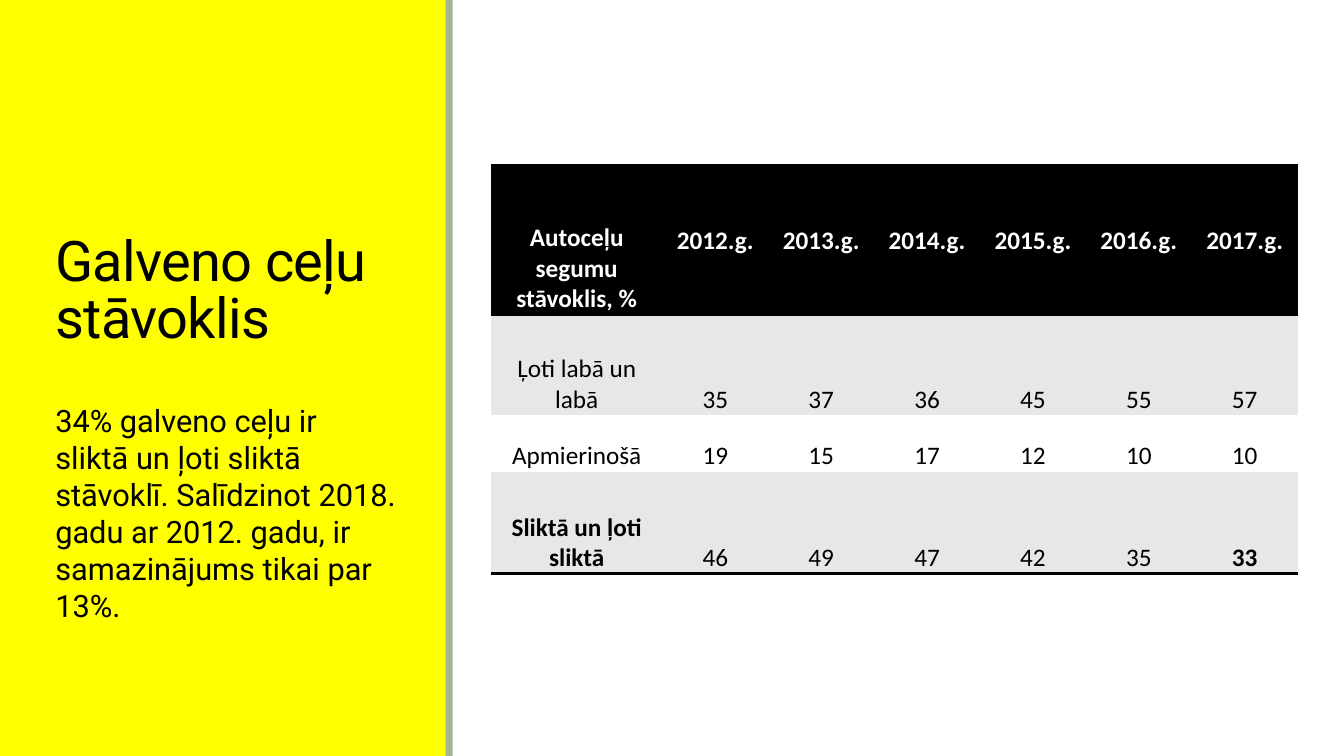
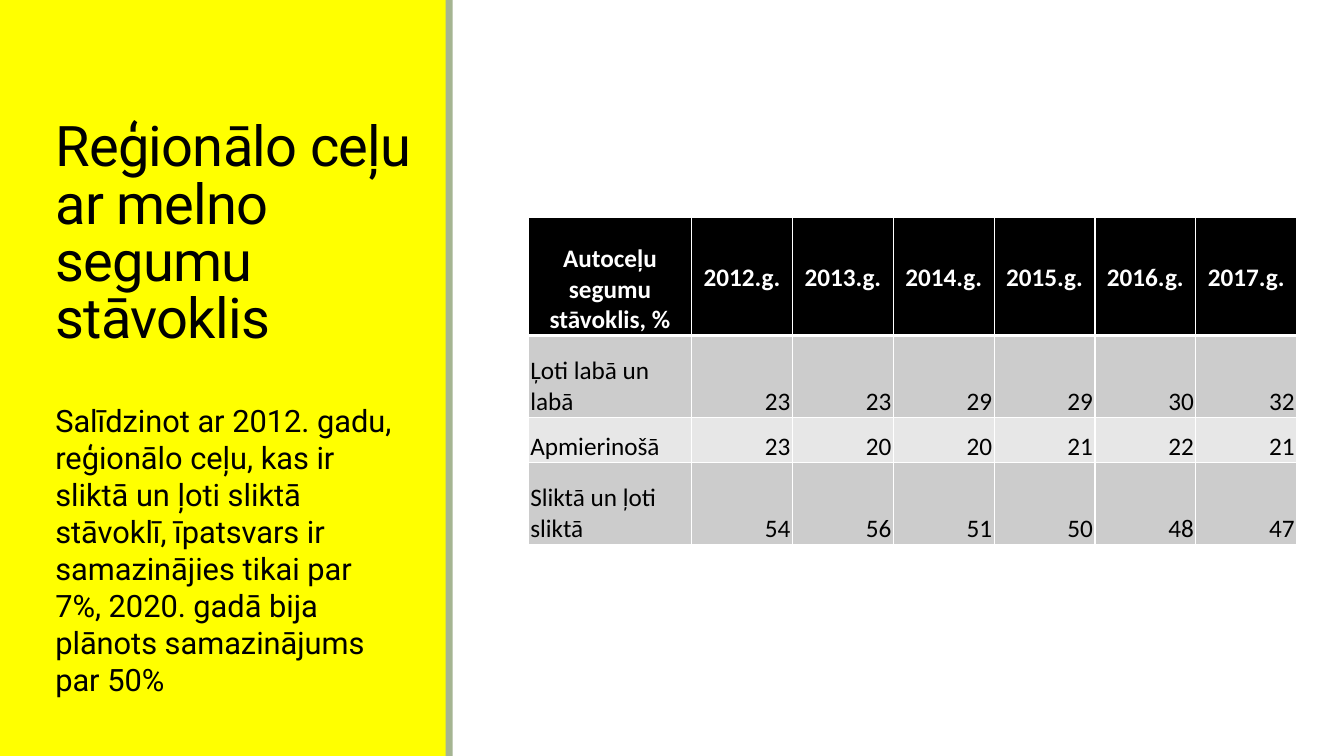
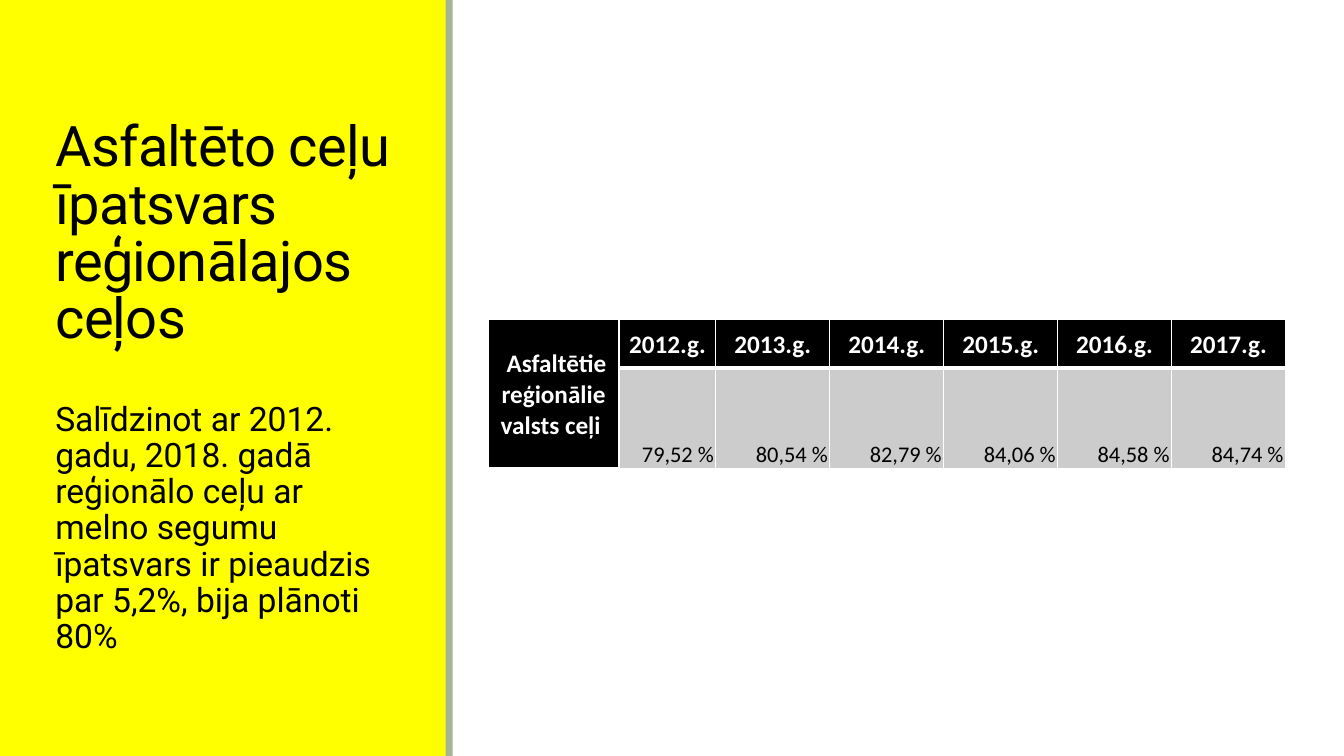
from dataclasses import dataclass, field

from lxml.etree import SubElement
from pptx import Presentation
from pptx.dml.color import RGBColor
from pptx.enum.shapes import MSO_SHAPE
from pptx.enum.text import MSO_ANCHOR, MSO_AUTO_SIZE, PP_ALIGN
from pptx.oxml.ns import qn
from pptx.slide import Slide, SlideLayout
from pptx.table import _Cell
from pptx.text.text import _Run
from pptx.util import Inches, Pt

COLORS = {
    "panel": "FFFF00",
    "rule": "A5B592",
    "black": "000000",
    "white": "FFFFFF",
    "light": "E7E7E7",
    "mid": "CCCCCC",
}
HEAD_FONT = "Roboto"
TABLE_FONT = "Calibri"
NO_STYLE = "{2D5ABB26-0587-4C30-8999-92F81FD0307C}"
YEARS = [f"{year}.g." for year in range(2012, 2018)]
Borders = dict[str, tuple[str, float]]
BLACK_EDGES: Borders = {"T": ("black", 2), "B": ("black", 2)}
BLACK_BOTTOM: Borders = {"B": ("black", 2)}
WHITE_HEAD: Borders = {"L": ("white", 1), "R": ("white", 1), "T": ("white", 1), "B": ("white", 3)}
WHITE_BODY: Borders = {"L": ("white", 1), "R": ("white", 1), "B": ("white", 1)}


@dataclass
class Band:
    left: float
    width: float
    color: str


@dataclass
class Row:
    height: float
    fill: str
    label: str | None
    values: list[str]
    borders: Borders = field(default_factory=dict)
    bold: tuple[int, ...] = ()


@dataclass
class RoadTable:
    left: float
    top: float
    cols: list[float]
    rows: list[Row]
    label_align: PP_ALIGN
    value_align: PP_ALIGN
    label_anchor: MSO_ANCHOR = MSO_ANCHOR.BOTTOM
    value_size: int = 18


@dataclass
class RoadSlide:
    title: str
    body: str
    body_height: float
    table: RoadTable
    title_width: float = 3.88
    body_size: int = 22
    body_spacing: float = 1.0


BANDS = [Band(0, 4.43, "panel"), Band(4.42, 0.07, "rule")]

SLIDES = [
    RoadSlide(
        "Galveno ceļu stāvoklis",
        "34% galveno ceļu ir sliktā un ļoti sliktā stāvoklī. Salīdzinot 2018. gadu "
        "ar 2012. gadu, ir samazinājums tikai par 13%.",
        2.32,
        RoadTable(
            4.87, 1.64, [1.7] + [1.05] * 6,
            [
                Row(1.48, "black", "Autoceļu segumu stāvoklis, %", YEARS, BLACK_EDGES),
                Row(1.0, "light", "Ļoti labā un labā", ["35", "37", "36", "45", "55", "57"]),
                Row(0.56, "white", "Apmierinošā", ["19", "15", "17", "12", "10", "10"]),
                Row(1.01, "light", "Sliktā un ļoti sliktā", ["46", "49", "47", "42", "35", "33"],
                    BLACK_BOTTOM, (0, 6)),
            ],
            PP_ALIGN.CENTER, PP_ALIGN.CENTER,
        ),
        title_width=4.88,
    ),
    RoadSlide(
        "Reģionālo ceļu ar melno segumu stāvoklis",
        "Salīdzinot ar 2012. gadu, reģionālo ceļu, kas ir sliktā un ļoti sliktā stāvoklī, "
        "īpatsvars ir samazinājies tikai par 7%, 2020. gadā bija plānots samazinājums par 50%",
        3.43,
        RoadTable(
            5.24, 2.16, [1.62] + [1.0] * 6,
            [
                Row(1.17, "black", "Autoceļu segumu stāvoklis, %", YEARS, WHITE_HEAD),
                Row(0.81, "mid", "Ļoti labā un labā", ["23", "23", "29", "29", "30", "32"], WHITE_BODY),
                Row(0.45, "light", "Apmierinošā", ["23", "20", "20", "21", "22", "21"], WHITE_BODY),
                Row(0.81, "mid", "Sliktā un ļoti sliktā", ["54", "56", "51", "50", "48", "47"], WHITE_BODY),
            ],
            PP_ALIGN.LEFT, PP_ALIGN.RIGHT,
        ),
    ),
    RoadSlide(
        "Asfaltēto ceļu īpatsvars reģionālajos ceļos",
        "Salīdzinot ar 2012. gadu, 2018. gadā reģionālo ceļu ar melno segumu īpatsvars "
        "ir pieaudzis par 5,2%, bija plānoti 80%",
        3.02,
        RoadTable(
            4.84, 3.17, [1.3, 0.96] + [1.13] * 5,
            [
                Row(0.48, "black", " Asfaltētie reģionālie valsts ceļi ", YEARS, WHITE_HEAD),
                Row(1.0, "mid", None,
                    ["79,52 %", "80,54 %", "82,79 %", "84,06 %", "84,58 %", "84,74 %"], WHITE_BODY),
            ],
            PP_ALIGN.CENTER, PP_ALIGN.RIGHT, MSO_ANCHOR.MIDDLE, 16,
        ),
        body_size=24,
        body_spacing=0.9,
    ),
]


def rgb(name: str) -> RGBColor:
    return RGBColor.from_string(COLORS[name])


def format_run(r: _Run, font: str, size: float, color: str, bold: bool = False) -> None:
    r.font.name = font
    r.font.size = Pt(size)
    r.font.color.rgb = rgb(color)
    r.font.bold = bold


def add_bands(s: Slide, layout: SlideLayout, height: int) -> None:
    for i, band in enumerate(BANDS):
        sp = s.shapes.add_shape(MSO_SHAPE.RECTANGLE, Inches(band.left), 0, Inches(band.width), height)
        sp.shadow.inherit = False
        sp.fill.solid()
        sp.fill.fore_color.rgb = rgb(band.color)
        sp.line.fill.background()
        sp.element.nvSpPr.cNvPr.set("id", str(100 + i))
        layout.shapes.element.append(sp.element)


def set_title(s: Slide, text: str, width: float) -> None:
    sp = s.shapes.title
    sp.left, sp.top, sp.width, sp.height = Inches(0.45), Inches(0.81), Inches(width), Inches(2.71)
    tf = sp.text_frame
    tf.text = text
    tf.word_wrap = True
    tf.auto_size = MSO_AUTO_SIZE.NONE
    tf.vertical_anchor = MSO_ANCHOR.BOTTOM
    p = tf.paragraphs[0]
    p.alignment = PP_ALIGN.LEFT
    p.line_spacing = 0.85
    r = p.runs[0]
    format_run(r, HEAD_FONT, 40, "black")
    r.font._element.set("spc", "-50")


def add_body(s: Slide, spec_slide: RoadSlide) -> None:
    sp = s.shapes.add_textbox(Inches(0.45), Inches(3.94), Inches(3.58), Inches(spec_slide.body_height))
    tf = sp.text_frame
    tf.text = spec_slide.body
    tf.word_wrap = True
    tf.auto_size = MSO_AUTO_SIZE.SHAPE_TO_FIT_TEXT
    p = tf.paragraphs[0]
    p.line_spacing = spec_slide.body_spacing
    format_run(p.runs[0], HEAD_FONT, spec_slide.body_size, "black")


def set_borders(cell: _Cell, borders: Borders) -> None:
    tc_pr = cell._tc.get_or_add_tcPr()
    for side in "LRTB":
        if side in borders:
            color, width = borders[side]
            ln = SubElement(tc_pr, qn(f"a:ln{side}"), w=str(Pt(width)))
            SubElement(SubElement(ln, qn("a:solidFill")), qn("a:srgbClr"), val=COLORS[color])


def format_cell(cell: _Cell, text: str, row: Row, align: PP_ALIGN, anchor: MSO_ANCHOR,
                size: int, bold: bool) -> None:
    set_borders(cell, row.borders)
    cell.fill.solid()
    cell.fill.fore_color.rgb = rgb(row.fill)
    cell.margin_left = cell.margin_right = cell.margin_top = Inches(0.02)
    cell.margin_bottom = 0
    cell.vertical_anchor = anchor
    tf = cell.text_frame
    tf.text = text
    p = tf.paragraphs[0]
    p.alignment = align
    for r in p.runs:
        format_run(r, TABLE_FONT, size, "white" if row.fill == "black" else "black", bold)


def add_road_table(s: Slide, t: RoadTable) -> None:
    frame = s.shapes.add_table(
        len(t.rows), len(t.cols), Inches(t.left), Inches(t.top),
        Inches(sum(t.cols)), Inches(sum(row.height for row in t.rows)))
    for style in frame.element.iter(qn("a:tableStyleId")):
        style.text = NO_STYLE
    table = frame.table
    for col, width in zip(table.columns, t.cols):
        col.width = Inches(width)
    for i, row in enumerate(t.rows):
        table.rows[i].height = Inches(row.height)
        is_head = i == 0
        for j, text in enumerate([row.label, *row.values]):
            cell = table.cell(i, j)
            if text is None:
                table.cell(i - 1, j).merge(cell)
                continue
            is_label = j == 0
            align = PP_ALIGN.CENTER if is_head else t.label_align if is_label else t.value_align
            anchor = MSO_ANCHOR.BOTTOM
            if is_head:
                anchor = t.label_anchor if is_label else MSO_ANCHOR.MIDDLE
            size = 18 if is_head or is_label else t.value_size
            format_cell(cell, text, row, align, anchor, size, is_head or j in row.bold)


def main() -> None:
    prs = Presentation()
    prs.slide_width, prs.slide_height = Inches(13.33), Inches(7.5)
    layout = prs.slide_layouts[5]
    for i, road in enumerate(SLIDES):
        s = prs.slides.add_slide(layout)
        if i == 0:
            add_bands(s, layout, prs.slide_height)
        set_title(s, road.title, road.title_width)
        add_body(s, road)
        add_road_table(s, road.table)
    prs.save("out.pptx")


if __name__ == "__main__":
    main()
